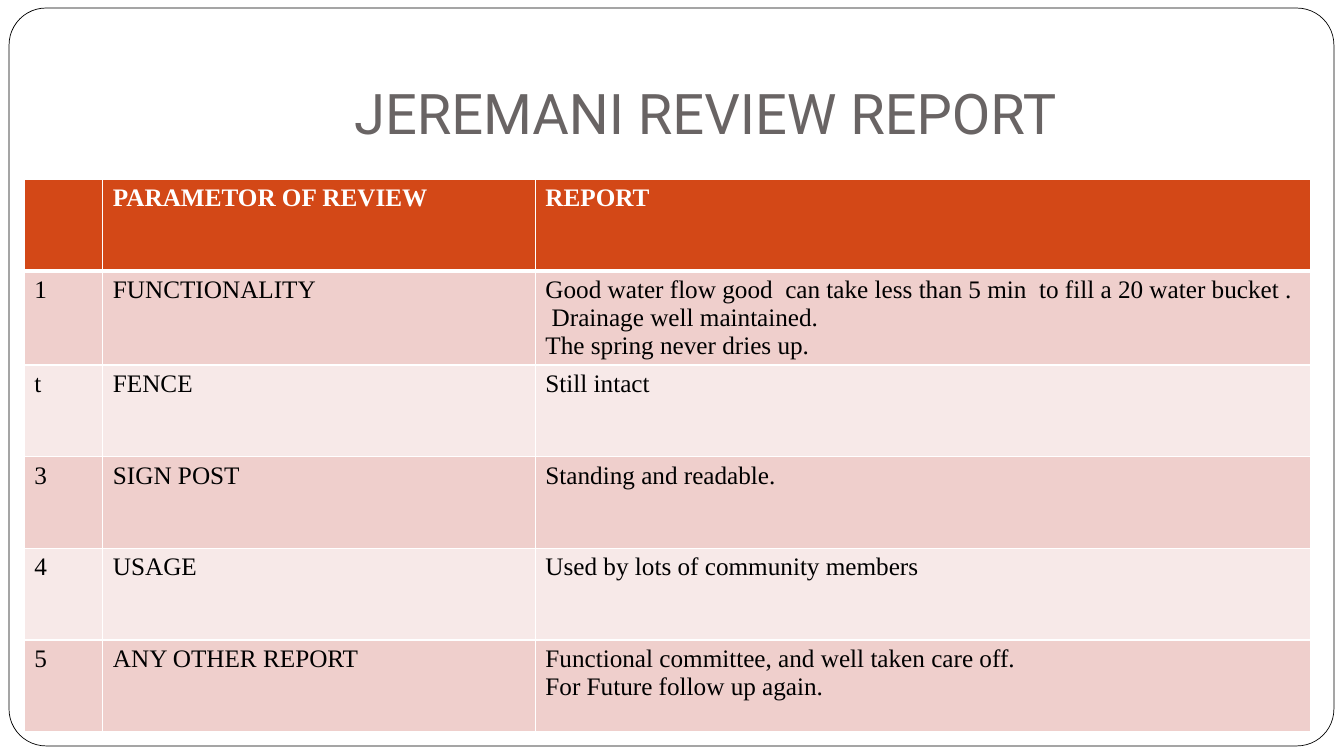
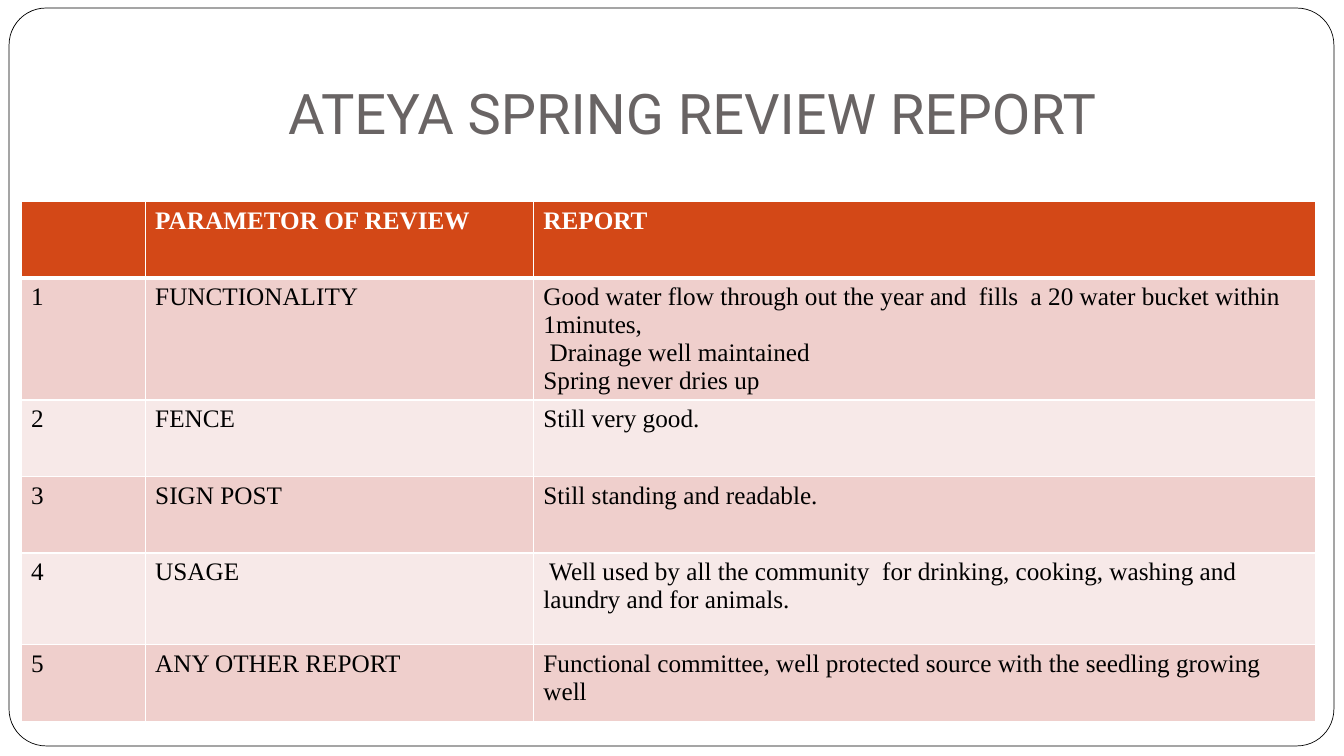
"""Build two spring review report slides, each with a title and a table."""
from lxml import etree
from pptx import Presentation
from pptx import util as u
from pptx.dml.color import RGBColor
from pptx.enum import shapes, text
from pptx.oxml import ns

WHITE = RGBColor(0xFF, 0xFF, 0xFF)
BLACK = RGBColor(0x00, 0x00, 0x00)
TITLE_GREY = RGBColor(0x69, 0x64, 0x64)
HEADER_ORANGE = RGBColor(0xD3, 0x48, 0x17)
BANDS = (RGBColor(0xEF, 0xCF, 0xCC), RGBColor(0xF7, 0xE9, 0xE8))
TITLE_FONT = "Roboto"
TABLE_FONT = "Times New Roman"
HEADERS = ("", "PARAMETOR OF REVIEW", "REPORT")
PARAMETERS = ("FUNCTIONALITY", "FENCE", "SIGN POST", "USAGE", "ANY OTHER REPORT")

REVIEWS = [
    {
        "title": "JEREMANI REVIEW REPORT",
        "right_inset": 0.1,
        "corner": (0.24, 1.78),
        "columns": (0.78, 4.29, 7.69),
        "rows": (0.91,) * 6,
        "numbers": "1t345",
        "reports": [
            ("Good water flow good  can take less than 5 min  to fill a 20 water bucket .",
             " Drainage well maintained.",
             "The spring never dries up."),
            ("Still intact",),
            ("Standing and readable.",),
            ("Used by lots of community members",),
            ("Functional committee, and well taken care off.",
             "For Future follow up again."),
        ],
    },
    {
        "title": "ATEYA SPRING REVIEW REPORT",
        "right_inset": 0.36,
        "corner": (0.21, 2),
        "columns": (1.23, 3.85, 7.76),
        "rows": (0.76, 0.86, 0.76, 0.76, 0.91, 0.76),
        "numbers": "12345",
        "reports": [
            ("Good water flow through out the year and  fills  a 20 water bucket within 1minutes,",
             " Drainage well maintained",
             "Spring never dries up"),
            ("Still very good.",),
            ("Still standing and readable.",),
            (" Well used by all the community  for drinking, cooking, washing and "
             "laundry and for animals.",),
            ("Functional committee, well protected source with the seedling growing well",),
        ],
    },
]


def place(shape, left, top, width, height):
    shape.left, shape.top = u.Inches(left), u.Inches(top)
    shape.width, shape.height = u.Inches(width), u.Inches(height)


def add_span(para, words, font, size, color, bold=False):
    span = para.add_run()
    span.text = words
    span.font.name = font
    span.font.size = u.Pt(size)
    span.font.color.rgb = color
    span.font.bold = bold


def style_layout(layout):
    title = layout.placeholders[0]
    place(title, 1.33, 0.3, 11.33, 1.25)
    frame = title.text_frame
    frame.auto_size = text.MSO_AUTO_SIZE.NONE
    frame.vertical_anchor = text.MSO_ANCHOR.BOTTOM
    frame.margin_left = frame.margin_right = frame.margin_bottom = u.Inches(0.1)
    frame.margin_top = u.Inches(0.05)


def add_border_to_layout(page, layout):
    border = page.shapes.add_shape(
        shapes.MSO_SHAPE.ROUNDED_RECTANGLE,
        u.Inches(0.09), u.Inches(0.08), u.Inches(13.14), u.Inches(7.32))
    border.adjustments[0] = 0.05
    border.shadow.inherit = False
    border.fill.solid()
    border.fill.fore_color.rgb = WHITE
    border.line.color.rgb = BLACK
    border.line.width = u.Pt(0.5)
    border.element.xpath(".//p:cNvPr")[0].set("id", "99")
    layout.shapes.element.insert(2, border.element)


def set_borders(cell, top, bottom):
    properties = cell._tc.get_or_add_tcPr()
    for side, width in (("L", 1), ("R", 1), ("T", top), ("B", bottom)):
        line = etree.SubElement(properties, ns.qn(f"a:ln{side}"), w=str(u.Pt(width)))
        fill = etree.SubElement(line, ns.qn("a:solidFill"))
        etree.SubElement(fill, ns.qn("a:srgbClr"), val=str(WHITE))


def fill_cell(cell, lines, row):
    header = row == 0
    set_borders(cell, top=3 if row == 1 else 1, bottom=3 if header else 1)
    cell.fill.solid()
    cell.fill.fore_color.rgb = HEADER_ORANGE if header else BANDS[(row - 1) % 2]
    for index, words in enumerate(lines):
        frame = cell.text_frame
        para = frame.add_paragraph() if index else frame.paragraphs[0]
        if words:
            add_span(para, words, TABLE_FONT, 18, WHITE if header else BLACK, header)


def add_review_table(page, review):
    columns, rows = review["columns"], review["rows"]
    left, top = review["corner"]
    table = page.shapes.add_table(
        len(rows), len(columns), u.Inches(left), u.Inches(top),
        u.Inches(sum(columns)), u.Inches(sum(rows))).table
    table.horz_banding = False
    for column, width in zip(table.columns, columns):
        column.width = u.Inches(width)
    for row, height in zip(table.rows, rows):
        row.height = u.Inches(height)
    content = [[(words,) for words in HEADERS]]
    for number, parameter, report in zip(review["numbers"], PARAMETERS, review["reports"]):
        content.append([(number,), (parameter,), report])
    for row, cells in enumerate(content):
        for column, lines in enumerate(cells):
            fill_cell(table.cell(row, column), lines, row)


def add_review(deck, layout, review):
    page = deck.slides.add_slide(layout)
    frame = page.shapes.title.text_frame
    frame.margin_right = u.Inches(review["right_inset"])
    para = frame.paragraphs[0]
    para.alignment = text.PP_ALIGN.CENTER
    add_span(para, review["title"], TITLE_FONT, 40, TITLE_GREY)
    add_review_table(page, review)
    return page


def main():
    deck = Presentation()
    deck.slide_width, deck.slide_height = u.Inches(13.33), u.Inches(7.5)
    layout = deck.slide_layouts.get_by_name("Title Only")
    style_layout(layout)
    pages = [add_review(deck, layout, review) for review in REVIEWS]
    add_border_to_layout(pages[0], layout)
    deck.save("out.pptx")


if __name__ == "__main__":
    main()
